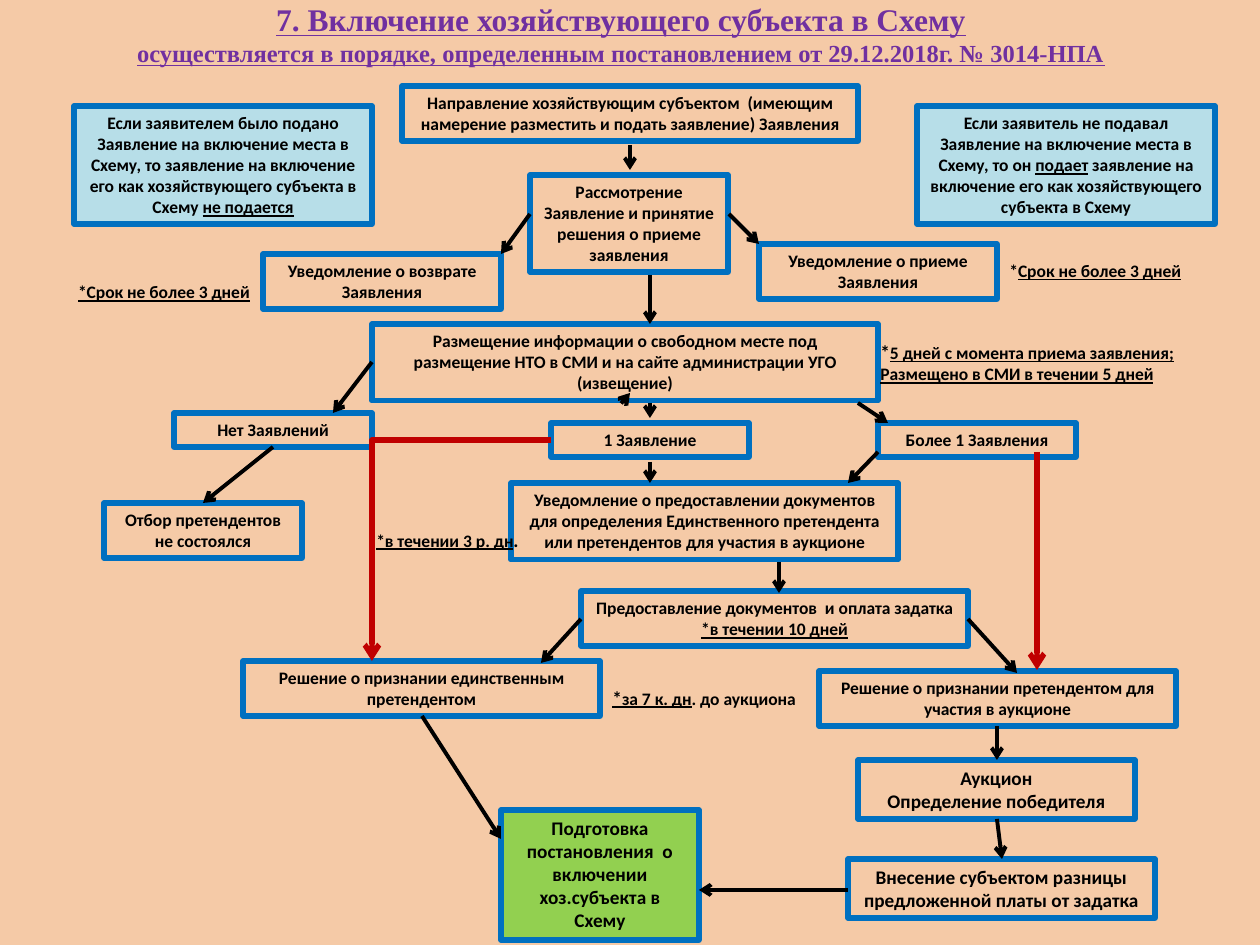
from lxml import etree
from pptx import Presentation, util as u
from pptx.dml.color import RGBColor
from pptx.enum import shapes, text
from pptx.oxml.ns import qn

PX = 914400 // 126
COLORS = {"background": "F5CAA7", "title": "7030A0", "text": "000000", "border": "0070C0",
          "blue": "B7DEE8", "green": "92D050", "red": "C00000"}

TITLE = [("7. Включение хозяйствующего субъекта в Схему", 18),
         ("осуществляется в порядке, определенным постановлением от 29.12.2018г. № 3014-НПА", 14)]

# Markup: _ switches underline on and off, ^ switches the 11 pt size
# Boxes: left, top, width, height, fill, font size, paragraphs
BOXES = [
    (402, 86, 456, 55, None, 10,
     ["Направление хозяйствующим субъектом  (имеющим намерение разместить и подать заявление) Заявления"]),
    (74, 106, 298, 118, "blue", 10,
     ["Если заявителем было подано Заявление на включение места в Схему, то заявление на "
      "включение его как хозяйствующего субъекта в Схему _не подается_"]),
    (917, 106, 298, 118, "blue", 10,
     ["Если заявитель не подавал Заявление на включение места в Схему, то он _подает_ заявление "
      "на включение его как хозяйствующего субъекта в Схему"]),
    (530, 175, 198, 97, None, 10, ["Рассмотрение Заявление и принятие решения о приеме заявления"]),
    (263, 254, 238, 55, None, 10, ["Уведомление о возврате Заявления"]),
    (759, 244, 238, 55, None, 10, ["Уведомление о приеме Заявления"]),
    (372, 324, 506, 77, None, 10,
     ["Размещение информации о свободном месте под размещение НТО в СМИ и на сайте "
      "администрации УГО (извещение)"]),
    (174, 413, 198, 34, None, 10, ["Нет Заявлений"]),
    (551, 423, 198, 34, None, 10, ["1 Заявление"]),
    (878, 423, 198, 34, None, 10, ["Более 1 Заявления"]),
    (104, 503, 198, 55, None, 10, ["Отбор претендентов не состоялся"]),
    (511, 483, 387, 77, None, 10,
     ["Уведомление о предоставлении документов для определения Единственного претендента "
      "или претендентов для участия в аукционе"]),
    (581, 591, 387, 55, None, 10,
     ["Предоставление документов  и оплата задатка", "_*в течении 10 дней_"]),
    (243, 661, 357, 55, None, 10, ["Решение о признании единственным претендентом"]),
    (819, 671, 357, 55, None, 10, ["Решение о признании претендентом для участия в аукционе"]),
    (858, 760, 277, 59, None, 11, ["Аукцион", "Определение победителя"]),
    (848, 859, 307, 59, None, 11, ["Внесение субъектом разницы предложенной платы от задатка"]),
    (501, 810, 198, 130, "green", 11, ["Подготовка постановления  о включении хоз.субъекта в Схему"]),
]

# Deadline notes: left, top, width, height, alignment, paragraphs
NOTES = [
    (54, 275, 208, 34, "RIGHT", ["_*Срок не более 3 дней_"]),
    (997, 254, 208, 34, "LEFT", ["*_Срок не более 3 дней_"]),
    (868, 334, 348, 59, "LEFT",
     ["^*^_5 дней с момента приема заявления;_", "_Размещено в СМИ в течении 5 дней_"]),
    (333, 522, 198, 36, "RIGHT", ["_*в течении 3 р. дн_^.^"]),
    (600, 680, 218, 36, "LEFT", ["^_*^за 7 к. дн_. до аукциона"]),
]

# Arrows: from x, from y, to x, to y
ARROWS = [
    (630, 145, 630, 170), (729, 214, 759, 244), (530, 214, 501, 254), (650, 275, 650, 324),
    (372, 362, 333, 413), (858, 403, 888, 423), (625, 399, 630, 393), (650, 403, 650, 418),
    (273, 447, 203, 503), (878, 452, 848, 483), (650, 462, 650, 483), (779, 562, 779, 593),
    (581, 619, 541, 663), (968, 619, 1017, 673), (997, 726, 997, 760), (997, 819, 1002, 859),
    (848, 890, 699, 890), (422, 716, 501, 839),
]
RED_ELBOW = (551, 440, 372, 661)
RED_ARROW = (1037, 452, 1037, 670)


def color(name):
    return RGBColor.from_string(COLORS[name])


def px(*values):
    return [value * PX for value in values]


def add_marked_runs(paragraph, marked, size):
    underline, large, piece = False, False, ""
    for letter in marked + "\n":
        if letter not in "_^\n":
            piece += letter
            continue
        if piece:
            run = paragraph.add_run()
            run.text = piece
            if underline:
                run.font.underline = True
            if large:
                run.font.size = u.Pt(11)
            piece = ""
        underline ^= letter == "_"
        large ^= letter == "^"


def write(shape, paragraphs, size, alignment):
    frame = shape.text_frame
    frame.word_wrap = True
    frame.auto_size = text.MSO_AUTO_SIZE.SHAPE_TO_FIT_TEXT
    frame.vertical_anchor = text.MSO_ANCHOR.TOP
    for index, marked in enumerate(paragraphs):
        paragraph = frame.add_paragraph() if index else frame.paragraphs[0]
        paragraph.alignment = text.PP_ALIGN[alignment]
        font = paragraph.font
        font.name, font.size, font.bold = "Calibri", u.Pt(size), True
        font.color.rgb = color("text")
        add_marked_runs(paragraph, marked, size)


def add_arrow(slide, ends, line_color="text", width=2.25, kind="STRAIGHT"):
    connector = slide.shapes.add_connector(shapes.MSO_CONNECTOR[kind], *px(*ends))
    connector.line.color.rgb = color(line_color)
    connector.line.width = u.Pt(width)
    etree.SubElement(connector.line._get_or_add_ln(), qn("a:tailEnd"), type="arrow")
    etree.SubElement(connector._element.spPr, qn("a:effectLst"))
    return connector


def main():
    presentation = Presentation()
    presentation.slide_width, presentation.slide_height = px(1260, 945)
    slide = presentation.slides.add_slide(presentation.slide_layouts[5])
    slide.background.fill.solid()
    slide.background.fill.fore_color.rgb = color("background")

    # Title
    title = slide.shapes.title
    title.left, title.top, title.width, title.height = px(54, 0, 1134, 68)
    title.text_frame.auto_size = text.MSO_AUTO_SIZE.NONE
    title.text_frame.vertical_anchor = text.MSO_ANCHOR.MIDDLE
    paragraph = title.text_frame.paragraphs[0]
    paragraph.alignment = text.PP_ALIGN.CENTER
    for index, (line, size) in enumerate(TITLE):
        if index:
            paragraph.add_line_break()
        run = paragraph.add_run()
        run.text = line
        font = run.font
        font.name, font.size, font.bold, font.underline = "Times New Roman", u.Pt(size), True, True
        font.color.rgb = color("title")

    # Boxes
    for *place, fill, size, paragraphs in BOXES:
        box = slide.shapes.add_shape(shapes.MSO_SHAPE.RECTANGLE, *px(*place))
        box.shadow.inherit = False
        box.line.color.rgb = color("border")
        box.line.width = u.Pt(3)
        if fill:
            box.fill.solid()
            box.fill.fore_color.rgb = color(fill)
        else:
            box.fill.background()
        write(box, paragraphs, size, "CENTER")

    # Deadline notes
    for *place, alignment, paragraphs in NOTES:
        write(slide.shapes.add_textbox(*px(*place)), paragraphs, 10, alignment)

    # Arrows
    for ends in ARROWS:
        add_arrow(slide, ends)
    elbow = add_arrow(slide, RED_ELBOW, "red", 3, "ELBOW")
    elbow._element.spPr.find(qn("a:prstGeom")).set("prst", "bentConnector2")
    add_arrow(slide, RED_ARROW, "red", 3)

    presentation.save("out.pptx")


if __name__ == "__main__":
    main()
